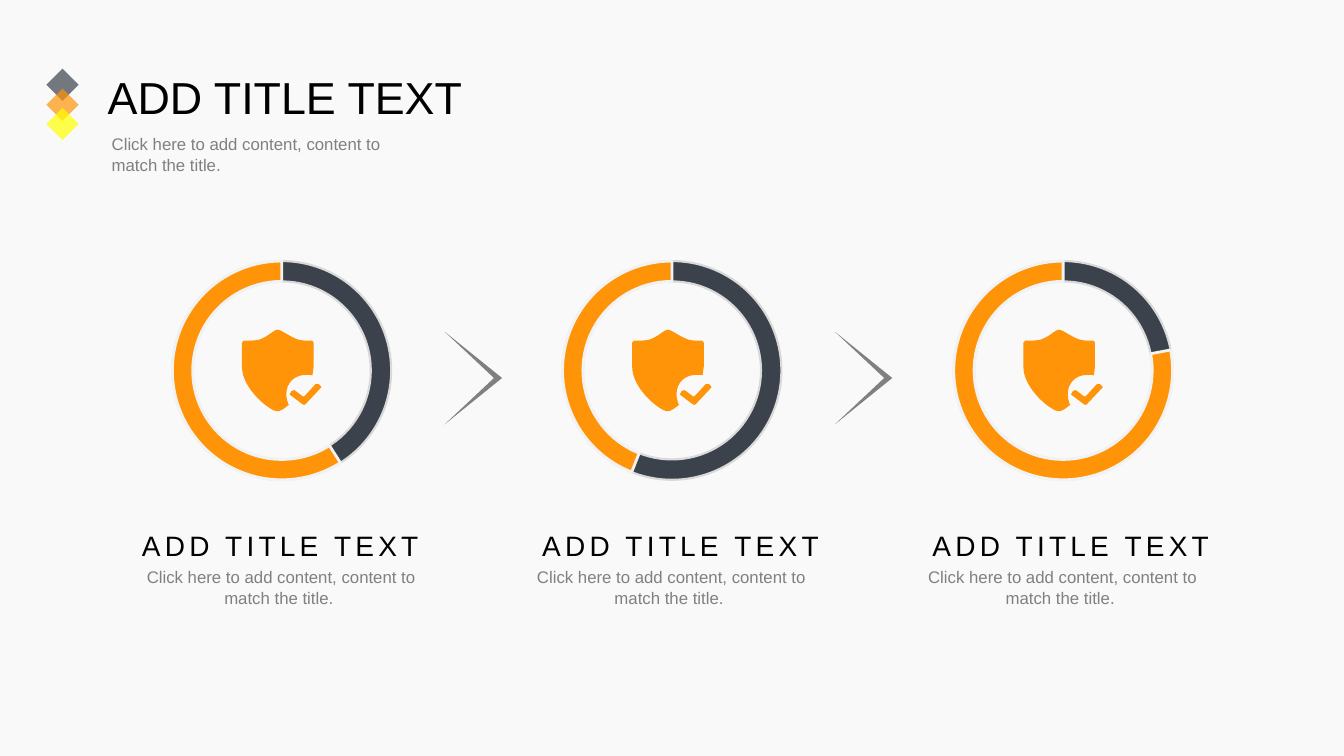
from dataclasses import dataclass

from lxml import etree
from pptx import Presentation
from pptx.dml.color import RGBColor
from pptx.enum.shapes import MSO_SHAPE
from pptx.enum.text import MSO_AUTO_SIZE, PP_ALIGN
from pptx.oxml.ns import qn
from pptx.util import Inches, Pt

DONUT, BLOCK_ARC, DIAMOND = MSO_SHAPE.DONUT, MSO_SHAPE.BLOCK_ARC, MSO_SHAPE.DIAMOND
LEFT, CENTER = PP_ALIGN.LEFT, PP_ALIGN.CENTER
FIT_SHAPE = MSO_AUTO_SIZE.SHAPE_TO_FIT_TEXT


@dataclass(frozen=True)
class Theme:
    font: str = "Arial"
    background: str = "F9F9F9"
    dark: str = "3B424B"
    accent: str = "FF9409"
    yellow: str = "FFFF00"
    ink: str = "000000"
    muted: str = "808080"
    ring_edge: str = "D9D9D9"
    arc_edge: str = "F2F2F2"
    title_size: int = 32
    heading_size: int = 20
    caption_size: int = 12
    caption_leading: float = 1.05


TITLE = "ADD TITLE TEXT"
CAPTION = "Click here to add content, content to match the title."
STEP_CAPTION = CAPTION + " "

# Ring left edge, dark share of the ring, heading left edge, heading width
STEPS = [
    (1.71, 0.41, 1.15, 3.26),
    (5.58, 0.56, 5.22, 3.06),
    (9.46, 0.22, 9.09, 3.06),
]
RING_TOP, RING_SIZE, RING_THICKNESS = 2.59, 2.17, 0.093

# Outlines in hundredths of an inch: a start point, then lines (x, y)
# and cubic curves (two control points and an end point).
CHECK_MARK = [
    (75, 54), (75, 54, 76, 54, 76, 54), (78, 56), (79, 57, 79, 58, 78, 58),
    (63, 74), (62, 75, 61, 75, 60, 74), (48, 65), (47, 65, 47, 63, 48, 63),
    (49, 61), (50, 60, 51, 60, 52, 60), (60, 66), (60, 67, 62, 66, 62, 66),
    (73, 54), (74, 54, 74, 54, 75, 54),
]
SHIELD = [
    (35, 0), (39, 0, 47, 7, 56, 10), (60, 11, 65, 11, 69, 11),
    (69, 11, 71, 11, 71, 13), (71, 14, 71, 36, 71, 37), (71, 39, 70, 42, 70, 45),
    (70, 45, 69, 46, 68, 45), (67, 45, 65, 45, 63, 45), (52, 45, 44, 53, 44, 64),
    (44, 68, 45, 71, 46, 74), (47, 75, 47, 75, 46, 75), (41, 79, 38, 81, 35, 81),
    (28, 81, 0, 59, 0, 37), (0, 36, 0, 13, 0, 13), (1, 11, 2, 11, 2, 11),
    (7, 11, 12, 11, 17, 10), (26, 7, 32, 0, 35, 0),
]
CHEVRON = [(0, 0), (57, 46), (0, 92), (49, 46)]


class SlideBuilder:
    def __init__(self, page, theme):
        self.page = page
        self.theme = theme
        fill = page.background.fill
        fill.solid()
        fill.fore_color.rgb = RGBColor.from_string(theme.background)

    def paint(self, shape, color, edge=None, edge_width=0):
        shape.shadow.inherit = False
        shape.fill.solid()
        shape.fill.fore_color.rgb = RGBColor.from_string(color)
        if edge:
            shape.line.color.rgb = RGBColor.from_string(edge)
            shape.line.width = Pt(edge_width)
        else:
            shape.line.fill.background()

    def preset(self, kind, left, top, size, color, edge=None, edge_width=0):
        shape = self.page.shapes.add_shape(
            kind, Inches(left), Inches(top), Inches(size), Inches(size))
        self.paint(shape, color, edge, edge_width)
        return shape

    def diamond(self, left, top, size, color, opacity):
        shape = self.preset(DIAMOND, left, top, size, color)
        color_node = shape.element.spPr.find(qn("a:solidFill"))[0]
        etree.SubElement(color_node, qn("a:alpha")).set("val", str(opacity * 1000))

    def progress_ring(self, left, dark_share):
        """Dark ring whose remaining share is covered anticlockwise from the top."""
        theme = self.theme
        ring = self.preset(DONUT, left, RING_TOP, RING_SIZE, theme.dark,
                           theme.ring_edge, 1.5)
        ring.adjustments[0] = RING_THICKNESS
        arc = self.preset(BLOCK_ARC, left, RING_TOP, RING_SIZE, theme.accent,
                          theme.arc_edge, 2)
        arc.element.spPr.find(qn("a:xfrm")).set("flipH", "1")
        # Angle adjustments count 0.6 per degree
        arc.adjustments[0] = 270 * 0.6
        arc.adjustments[1] = (270 - 360 * dark_share) * 0.6
        arc.adjustments[2] = RING_THICKNESS

    def freeform(self, left, top, outlines, color):
        """Draw the end points as lines, then bend the segments that are curves."""
        builder = self.page.shapes.build_freeform(*outlines[0][0], scale=Inches(0.01))
        for outline in outlines:
            if outline is not outlines[0]:
                builder.move_to(*outline[0])
            builder.add_line_segments([segment[-2:] for segment in outline[1:]], close=True)
        shape = builder.convert_to_shape(Inches(left), Inches(top))
        segments = [segment for outline in outlines for segment in outline[1:]]
        for line, segment in zip(list(shape.element.iter(qn("a:lnTo"))), segments):
            if len(segment) == 6:
                curve = etree.Element(qn("a:cubicBezTo"))
                for x, y in zip(segment[::2], segment[1::2]):
                    etree.SubElement(curve, qn("a:pt"), x=str(x), y=str(y))
                line.getparent().replace(line, curve)
        self.paint(shape, color)

    def text(self, words, left, top, width, height, size, color,
             align=LEFT, spacing=0, leading=None):
        box = self.page.shapes.add_textbox(
            Inches(left), Inches(top), Inches(width), Inches(height))
        frame = box.text_frame
        frame.word_wrap = True
        frame.auto_size = FIT_SHAPE
        frame.margin_top = Inches(0.04)
        frame.text = words
        para = frame.paragraphs[0]
        para.alignment = align
        para.line_spacing = leading
        span = para.runs[0]
        span.font.name = self.theme.font
        span.font.size = Pt(size)
        span.font.color.rgb = RGBColor.from_string(color)
        if spacing:
            span.font._element.set("spc", str(spacing * 100))

    def caption(self, words, left, top, width, align=LEFT):
        theme = self.theme
        self.text(words, left, top, width, 0.5, theme.caption_size, theme.muted,
                  align, leading=theme.caption_leading)


def main():
    theme = Theme()
    deck = Presentation()
    deck.slide_width, deck.slide_height = Inches(13.33), Inches(7.5)
    slide = SlideBuilder(deck.slides.add_slide(deck.slide_layouts[6]), theme)

    for left, dark_share, heading_left, heading_width in STEPS:
        slide.progress_ring(left, dark_share)
        slide.freeform(left + 0.69, 3.27, [CHECK_MARK, SHIELD], theme.accent)
        slide.caption(STEP_CAPTION, left - 0.45, 5.57, 3.06, CENTER)
        slide.text(TITLE, heading_left, 5.2, heading_width, 0.44,
                   theme.heading_size, theme.ink, CENTER, spacing=3)

    slide.caption(CAPTION, 1.01, 1.28, 3.16)
    slide.text(TITLE, 0.97, 0.65, 3.73, 0.64, theme.title_size, theme.ink)

    for top, color in zip((0.68, 0.88, 1.07), (theme.dark, theme.accent, theme.yellow)):
        slide.diamond(0.46, top, 0.32, color, opacity=70)

    for left, *_ in STEPS[:-1]:
        slide.freeform(left + 2.7, 3.29, [CHEVRON], theme.muted)

    deck.save("out.pptx")


if __name__ == "__main__":
    main()
